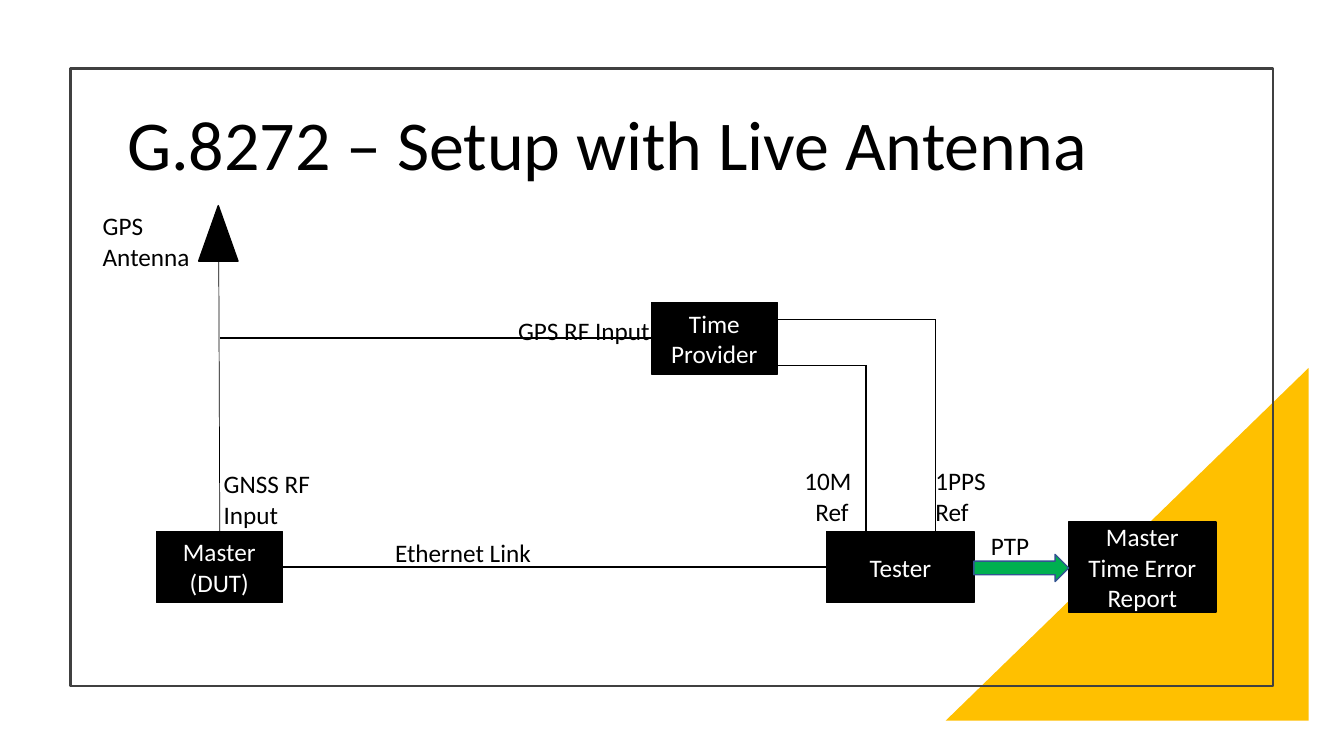
from dataclasses import dataclass

import pptx
import pptx.dml.color
import pptx.enum.shapes
import pptx.enum.text
import pptx.oxml
import pptx.oxml.ns
import pptx.util

Pt = pptx.util.Pt
SHAPE = pptx.enum.shapes.MSO_SHAPE
ALIGN = pptx.enum.text.PP_ALIGN
ANCHOR = pptx.enum.text.MSO_ANCHOR

FONT = "Calibri"
COLORS = {
    "ink": "000000", "paper": "FFFFFF", "frame": "404040",
    "accent": "FFC000", "ptp": "00B050", "ptp_line": "325491",
}
SLIDE_W, SLIDE_H = 13.33, 7.5
GRID = 0.1  # side of one grid cell in inches: lengths below are columns and rows


@dataclass(frozen=True)
class Area:
    col: float
    row: float
    cols: float
    rows: float

    @property
    def right(self) -> float:
        return self.col + self.cols

    @property
    def mid(self) -> float:
        return self.row + self.rows / 2


@dataclass(frozen=True)
class Node:
    area: Area
    lines: tuple[str, ...]


@dataclass(frozen=True)
class Label:
    area: Area
    lines: tuple[str, ...]
    last_indent: float = 0


@dataclass(frozen=True)
class Wire:
    points: tuple[tuple[float, float], ...]
    widths: tuple[float, ...]


# Equipment
DUT = Node(Area(15.5, 52.7, 12.5, 7.1), ("Master", "(DUT)"))
PROVIDER = Node(Area(64.6, 30, 12.5, 7.1), ("Time Provider",))
TESTER = Node(Area(82, 52.7, 14.6, 7.1), ("Tester",))
REPORT = Node(Area(106, 51.8, 14.6, 8.9), ("Master Time Error Report",))
NODES = (DUT, PROVIDER, TESTER, REPORT)

# Cabling
ANTENNA = Area(19.7, 20.4, 3.9, 5.5)
MAST, REF_10M, REF_1PPS = 21.8, 85.9, 92.8
WIRES = (
    Wire(((MAST, DUT.area.row), (MAST - 0.1, ANTENNA.row + ANTENNA.rows)), (0.5,)),
    Wire(((MAST, PROVIDER.area.mid), (PROVIDER.area.col, PROVIDER.area.mid)), (1,)),
    Wire(((PROVIDER.area.right, 36.2), (REF_10M, 36.2), (REF_10M, TESTER.area.row)), (0.5, 1)),
    Wire(((PROVIDER.area.right, 31.7), (REF_1PPS, 31.7), (REF_1PPS, TESTER.area.row)), (0.5, 0.5)),
    Wire(((DUT.area.right, DUT.area.mid), (TESTER.area.col, DUT.area.mid)), (1,)),
)

LABELS = (
    Label(Area(9.2, 20.4, 12.7, 7.1), ("GPS", "Antenna")),
    Label(Area(78.8, 45.7, 12.7, 7.1), ("10M", "Ref"), last_indent=1.1),
    Label(Area(91.8, 45.7, 12.7, 7.1), ("1PPS\vRef",)),
    Label(Area(38.2, 52.8, 17.7, 4), ("Ethernet Link",)),
    Label(Area(21.2, 46, 15.5, 7.1), ("GNSS RF Input",)),
    Label(Area(50.4, 30.8, 15.5, 4), ("GPS RF Input",)),
    Label(Area(97.3, 52.1, 12.7, 4), ("PTP",)),
)


def cells(n: float) -> int:
    return pptx.util.Inches(n * GRID)


def box(a: Area) -> tuple[int, int, int, int]:
    return cells(a.col), cells(a.row), cells(a.cols), cells(a.rows)


def rgb(name: str) -> pptx.dml.color.RGBColor:
    return pptx.dml.color.RGBColor.from_string(COLORS[name])


def write(tf, lines: tuple[str, ...], *, size: float = 18, color: str = "ink",
          align=ALIGN.LEFT, anchor=ANCHOR.TOP, spacing: float = 1.0) -> None:
    tf.word_wrap = True
    tf.vertical_anchor = anchor
    for i, line in enumerate(lines):
        p = tf.paragraphs[0] if i == 0 else tf.add_paragraph()
        p.text = line
        p.alignment = align
        p.line_spacing = spacing
        for r in p.runs:
            r.font.name = FONT
            r.font.size = Pt(size)
            r.font.color.rgb = rgb(color)


def add_shape(slide, kind, a: Area, *, fill: str | None = None,
              line: str | None = None, width: float = 1):
    sp = slide.shapes.add_shape(kind, *box(a))
    sp.shadow.inherit = False
    if fill:
        sp.fill.solid()
        sp.fill.fore_color.rgb = rgb(fill)
    else:
        sp.fill.background()
    if line:
        sp.line.color.rgb = rgb(line)
        sp.line.width = Pt(width)
    else:
        sp.line.fill.background()
    return sp


def add_wire(slide, wire: Wire) -> None:
    for start, end, width in zip(wire.points, wire.points[1:], wire.widths):
        cx = slide.shapes.add_connector(
            pptx.enum.shapes.MSO_CONNECTOR.STRAIGHT, *map(cells, start + end))
        cx.line.color.rgb = rgb("ink")
        cx.line.width = Pt(width)
        cx._element.spPr.append(pptx.oxml.parse_xml(
            f"<a:effectLst {pptx.oxml.ns.nsdecls('a')}/>"))


def add_label(slide, label: Label) -> None:
    tf = slide.shapes.add_textbox(*box(label.area)).text_frame
    write(tf, label.lines)
    if label.last_indent:
        p = tf.paragraphs[-1]
        p._p.get_or_add_pPr().set("marL", str(cells(label.last_indent)))


def add_node(slide, node: Node) -> None:
    sp = add_shape(slide, SHAPE.RECTANGLE, node.area, fill="ink", line="ink")
    write(sp.text_frame, node.lines, color="paper", align=ALIGN.CENTER, anchor=ANCHOR.MIDDLE)


def main() -> None:
    prs = pptx.Presentation()
    prs.slide_width = pptx.util.Inches(SLIDE_W)
    prs.slide_height = pptx.util.Inches(SLIDE_H)
    slide = prs.slides.add_slide(prs.slide_layouts[5])

    # Title
    title = slide.shapes.title
    title.left, title.top, title.width, title.height = box(Area(11.6, 5.8, 108.3, 17.7))
    write(title.text_frame, ("G.8272 – Setup with Live Antenna",),
          size=50, anchor=ANCHOR.MIDDLE, spacing=0.9)

    # Corner and frame
    corner = add_shape(slide, SHAPE.RIGHT_TRIANGLE, Area(93.8, 36.5, 36, 35), fill="accent")
    corner._element.spPr.get_or_add_xfrm().set("flipH", "1")
    add_shape(slide, SHAPE.RECTANGLE, Area(7, 6.8, 119.3, 61.3), line="frame", width=1.5)

    # Diagram
    add_shape(slide, SHAPE.ISOSCELES_TRIANGLE, ANTENNA, fill="ink", line="ink")
    for wire in WIRES:
        add_wire(slide, wire)
    for node in NODES:
        add_node(slide, node)
    link = Area(TESTER.area.right, 55, REPORT.area.col - TESTER.area.right, 2.7)
    add_shape(slide, SHAPE.RIGHT_ARROW, link, fill="ptp", line="ptp_line")
    for label in LABELS:
        add_label(slide, label)

    prs.save("out.pptx")


if __name__ == "__main__":
    main()
